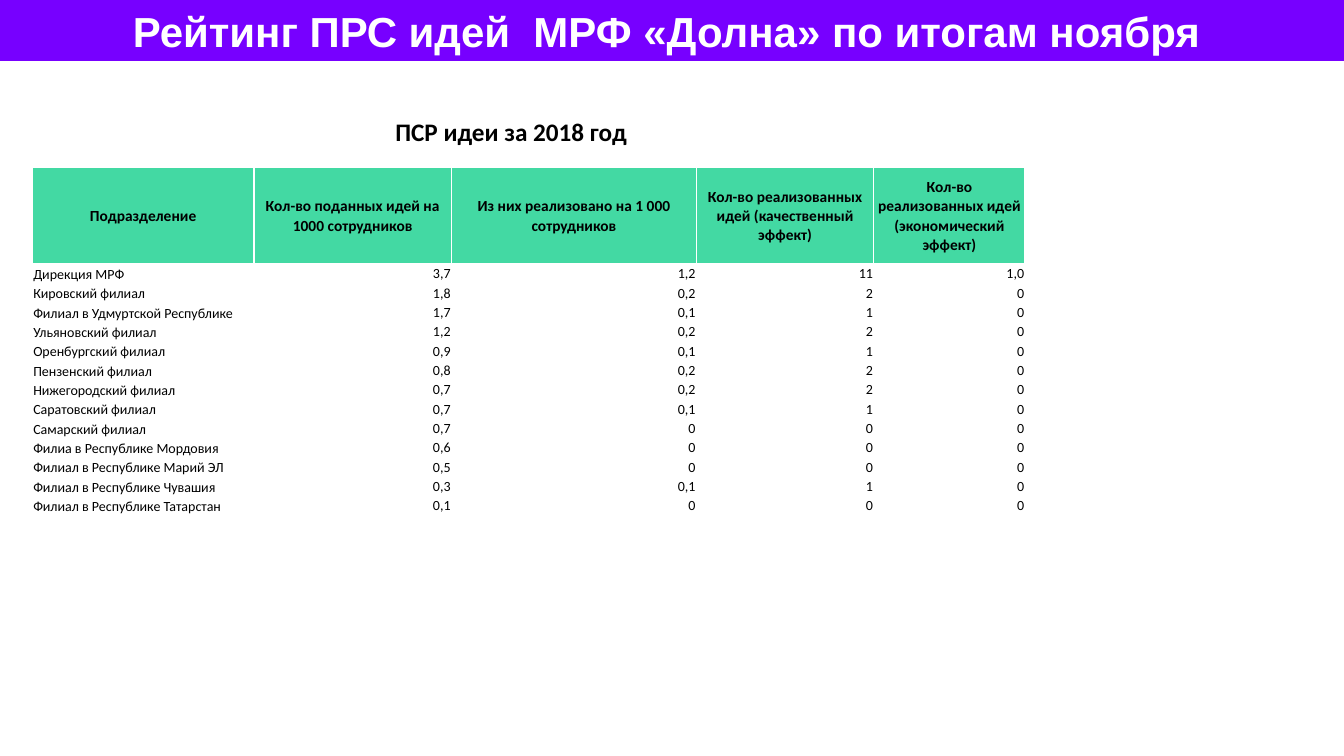
import dataclasses
import typing

import lxml.etree
import pptx
import pptx.dml.color
import pptx.enum.text
import pptx.oxml.ns
import pptx.util

EMU_PER_PX = 914400 / 500

PURPLE = pptx.dml.color.RGBColor(0x77, 0x00, 0xFF)
GREEN = pptx.dml.color.RGBColor(0x43, 0xD9, 0xA3)
WHITE = pptx.dml.color.RGBColor(0xFF, 0xFF, 0xFF)
BLACK = pptx.dml.color.RGBColor(0x00, 0x00, 0x00)

ALIGN = pptx.enum.text.PP_ALIGN
ANCHOR = pptx.enum.text.MSO_ANCHOR


@dataclasses.dataclass(frozen=True)
class Box:
    left: int
    top: int
    width: int
    height: int


@dataclasses.dataclass(frozen=True)
class TextStyle:
    size: int
    font: str
    color: pptx.dml.color.RGBColor
    bold: bool
    align: ALIGN


@dataclasses.dataclass(frozen=True)
class Column:
    heading: str
    width: int


@dataclasses.dataclass(frozen=True)
class Branch:
    name: str
    values: tuple[str, ...]


TITLE_STYLE = TextStyle(30, "Arial", WHITE, True, ALIGN.CENTER)
CAPTION_STYLE = TextStyle(18, "Calibri", BLACK, True, ALIGN.CENTER)
HEADING_STYLE = TextStyle(11, "Calibri", BLACK, True, ALIGN.CENTER)
NAME_STYLE = TextStyle(10, "Calibri", BLACK, False, ALIGN.LEFT)
VALUE_STYLE = TextStyle(10, "Calibri", BLACK, False, ALIGN.RIGHT)

SLIDE_WIDTH, SLIDE_HEIGHT = 6667, 3750
TITLE_BOX = Box(0, 0, SLIDE_WIDTH, 302)
CAPTION_BOX = Box(1555, 555, 1990, 200)
TABLE_LEFT, TABLE_TOP = 160, 830
HEADING_HEIGHT, ROW_HEIGHT = 480, 96
CELL_MARGIN = 5

COLUMNS = [
    Column("Подразделение", 1100),
    Column("Кол-во поданных идей на 1000 сотрудников", 980),
    Column("Из них реализовано на 1 000 сотрудников", 1215),
    Column("Кол-во реализованных идей (качественный эффект)", 880),
    Column("Кол-во реализованных идей (экономический эффект)", 750),
]

BRANCHES = [
    Branch("Дирекция МРФ", ("3,7", "1,2", "11", "1,0")),
    Branch("Кировский филиал", ("1,8", "0,2", "2", "0")),
    Branch("Филиал в Удмуртской Республике", ("1,7", "0,1", "1", "0")),
    Branch("Ульяновский филиал", ("1,2", "0,2", "2", "0")),
    Branch("Оренбургский филиал", ("0,9", "0,1", "1", "0")),
    Branch("Пензенский филиал", ("0,8", "0,2", "2", "0")),
    Branch("Нижегородский филиал", ("0,7", "0,2", "2", "0")),
    Branch("Саратовский филиал", ("0,7", "0,1", "1", "0")),
    Branch("Самарский филиал", ("0,7", "0", "0", "0")),
    Branch("Филиа в Республике Мордовия", ("0,6", "0", "0", "0")),
    Branch("Филиал в Республике Марий ЭЛ", ("0,5", "0", "0", "0")),
    Branch("Филиал в Республике Чувашия", ("0,3", "0,1", "1", "0")),
    Branch("Филиал в Республике Татарстан", ("0,1", "0", "0", "0")),
    Branch("", ("", "", "", "")),
]


def px(length: int) -> pptx.util.Emu:
    return pptx.util.Emu(round(length * EMU_PER_PX))


def apply_format(target: typing.Any, values: dict[str, typing.Any]) -> None:
    for name, value in values.items():
        setattr(target, name, value)


def place(shape: typing.Any, box: Box) -> None:
    apply_format(shape, {name: px(length) for name, length in dataclasses.asdict(box).items()})


def write_text(text_frame: typing.Any, text: str, style: TextStyle) -> None:
    paragraph = text_frame.paragraphs[0]
    paragraph.alignment = style.align
    if not text:
        # An empty cell keeps its row low through the end-mark size
        end_mark = lxml.etree.SubElement(paragraph._p, pptx.oxml.ns.qn("a:endParaRPr"))
        end_mark.set("sz", str(style.size * 100))
        return
    run = paragraph.add_run()
    run.text = text
    apply_format(run.font, {
        "size": pptx.util.Pt(style.size), "name": style.font, "bold": style.bold,
    })
    run.font.color.rgb = style.color


def add_borders(cell: typing.Any) -> None:
    properties = cell._tc.get_or_add_tcPr()
    for position, side in enumerate(("lnL", "lnR", "lnT", "lnB")):
        line = lxml.etree.Element(pptx.oxml.ns.qn(f"a:{side}"), w=str(pptx.util.Pt(1)))
        fill = lxml.etree.SubElement(line, pptx.oxml.ns.qn("a:solidFill"))
        lxml.etree.SubElement(fill, pptx.oxml.ns.qn("a:srgbClr"), val=str(WHITE))
        properties.insert(position, line)


def fill_cell(cell: typing.Any, text: str, style: TextStyle, anchor: ANCHOR) -> None:
    apply_format(cell, {
        "margin_left": px(CELL_MARGIN), "margin_right": px(CELL_MARGIN),
        "margin_top": px(CELL_MARGIN), "margin_bottom": 0,
        "vertical_anchor": anchor,
    })
    if style is HEADING_STYLE:
        cell.fill.solid()
        cell.fill.fore_color.rgb = GREEN
    else:
        cell.fill.background()
    add_borders(cell)
    write_text(cell.text_frame, text, style)


def add_title(slide: typing.Any) -> None:
    title = slide.shapes.title
    place(title, TITLE_BOX)
    title.fill.solid()
    title.fill.fore_color.rgb = PURPLE
    apply_format(title.text_frame, {
        "margin_left": 0, "margin_right": px(50), "margin_top": px(25), "margin_bottom": px(25),
        "word_wrap": True, "vertical_anchor": ANCHOR.MIDDLE,
        "auto_size": pptx.enum.text.MSO_AUTO_SIZE.NONE,
    })
    write_text(title.text_frame, "Рейтинг ПРС идей  МРФ «Долна» по итогам ноября", TITLE_STYLE)


def add_caption(slide: typing.Any) -> None:
    caption = slide.shapes.add_textbox(0, 0, 0, 0)
    place(caption, CAPTION_BOX)
    caption.text_frame.word_wrap = True
    write_text(caption.text_frame, "ПСР идеи за 2018 год ", CAPTION_STYLE)


def add_rating_table(slide: typing.Any) -> None:
    width = sum(column.width for column in COLUMNS)
    height = HEADING_HEIGHT + ROW_HEIGHT * len(BRANCHES)
    table = slide.shapes.add_table(
        len(BRANCHES) + 1, len(COLUMNS), px(TABLE_LEFT), px(TABLE_TOP), px(width), px(height)
    ).table
    apply_format(table, {"first_row": False, "horz_banding": False})

    # Heading row
    table.rows[0].height = px(HEADING_HEIGHT)
    for index, column in enumerate(COLUMNS):
        table.columns[index].width = px(column.width)
        fill_cell(table.cell(0, index), column.heading, HEADING_STYLE, ANCHOR.MIDDLE)

    # Branch rows
    for row, branch in enumerate(BRANCHES, start=1):
        table.rows[row].height = px(ROW_HEIGHT)
        name_anchor = ANCHOR.MIDDLE if row == 2 else ANCHOR.BOTTOM
        fill_cell(table.cell(row, 0), branch.name, NAME_STYLE, name_anchor)
        for index, value in enumerate(branch.values, start=1):
            fill_cell(table.cell(row, index), value, VALUE_STYLE, ANCHOR.MIDDLE)


def main() -> None:
    presentation = pptx.Presentation()
    apply_format(presentation, {
        "slide_width": px(SLIDE_WIDTH), "slide_height": px(SLIDE_HEIGHT),
    })
    slide = presentation.slides.add_slide(presentation.slide_layouts[5])
    add_title(slide)
    add_caption(slide)
    add_rating_table(slide)
    presentation.save("out.pptx")


if __name__ == "__main__":
    main()
